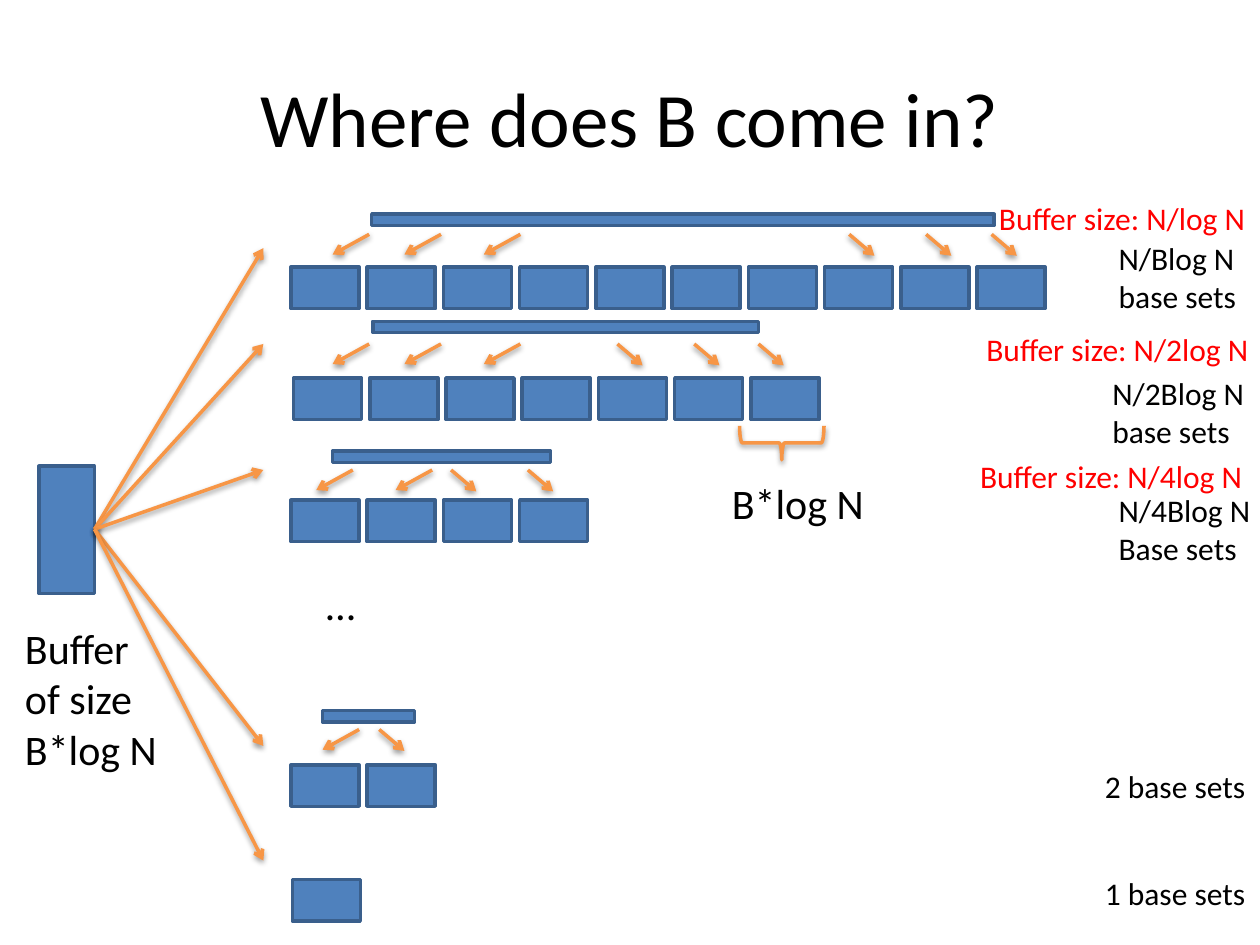
"""Build the slide that shows how buffers of each level feed their base sets."""
from dataclasses import dataclass

from lxml import etree
from pptx import Presentation
from pptx.dml.color import RGBColor
from pptx.enum.shapes import MSO_CONNECTOR, MSO_SHAPE
from pptx.enum.text import MSO_ANCHOR, MSO_AUTO_SIZE, PP_ALIGN
from pptx.oxml import parse_xml
from pptx.oxml.ns import nsdecls, qn
from pptx.util import Inches, Pt

RECTANGLE = MSO_SHAPE.RECTANGLE
LEFT_BRACE = MSO_SHAPE.LEFT_BRACE
STRAIGHT = MSO_CONNECTOR.STRAIGHT
MIDDLE = MSO_ANCHOR.MIDDLE
FIT_SHAPE = MSO_AUTO_SIZE.SHAPE_TO_FIT_TEXT
CENTER = PP_ALIGN.CENTER


@dataclass(frozen=True)
class Theme:
    font: str = "Calibri"
    text: RGBColor = RGBColor(0x00, 0x00, 0x00)
    accent: RGBColor = RGBColor(0xFF, 0x00, 0x00)
    fill: RGBColor = RGBColor(0x4F, 0x81, 0xBD)
    outline: RGBColor = RGBColor(0x3A, 0x5F, 0x8C)
    arrow: RGBColor = RGBColor(0xF7, 0x96, 0x46)
    title: int = 44
    large: int = 24
    small: int = 18
    stroke: int = 2


theme = Theme()
SHADOW = (
    f'<a:effectLst {nsdecls("a")}>'
    '<a:outerShdw blurRad="40000" dist="20000" dir="5400000" rotWithShape="0">'
    '<a:srgbClr val="000000"><a:alpha val="38000"/></a:srgbClr>'
    '</a:outerShdw></a:effectLst>'
)


def style_text(frame, size, color):
    for paragraph in frame.paragraphs:
        for span in paragraph.runs:
            span.font.name = theme.font
            span.font.size = Pt(size)
            span.font.color.rgb = color


def style_orange_line(shape):
    shape.line.color.rgb = theme.arrow
    shape.line.width = Pt(theme.stroke)
    shape._element.spPr.append(parse_xml(SHADOW))


deck = Presentation()
deck.slide_width, deck.slide_height = Inches(10), Inches(7.5)
page = deck.slides.add_slide(deck.slide_layouts[5])

title = page.shapes.title
title.left, title.top = Inches(0.5), Inches(0.3)
title.width, title.height = Inches(9), Inches(1.25)
title.text_frame.text = "Where does B come in?"
title.text_frame.vertical_anchor = MIDDLE
title.text_frame.paragraphs[0].alignment = CENTER
style_text(title.text_frame, theme.title, theme.text)

set_width, set_height, set_pitch = 0.54, 0.33, 0.605
base_set_rows = [
    (2.31, 2.12, 10),
    (2.33, 3, 7),
    (2.31, 3.97, 4),
    (2.31, 6.07, 2),
    (2.32, 6.98, 1),
]
level_buffers = [
    (2.95, 1.7, 4.94),
    (2.96, 2.55, 3.06),
    (2.64, 3.58, 1.73),
    (2.56, 5.64, 0.73),
]
rectangles = [(left, top, width, 0.09) for left, top, width in level_buffers]
rectangles.append((0.31, 3.7, 0.44, 1.01))
for left, top, count in base_set_rows:
    for index in range(count):
        rectangles.append((left + index * set_pitch, top, set_width, set_height))
for bounds in rectangles:
    box = page.shapes.add_shape(RECTANGLE, *map(Inches, bounds))
    box.shadow.inherit = False
    box.fill.solid()
    box.fill.fore_color.rgb = theme.fill
    box.line.color.rgb = theme.outline
    box.line.width = Pt(theme.stroke)

level_arrows = [
    (1.86, [2.93, 3.5, 4.13], [6.74, 7.35, 7.87]),
    (2.73, [2.93, 3.5, 4.13], [4.9, 5.51, 6.02]),
    (3.73, [2.8, 3.43], [3.58, 4.19]),
    (5.79, [2.85], [3.01]),
]
arrows = [(0.75, 4.2, 2.09, level) for level in (1.97, 2.73, 3.73, 5.92, 6.83)]
for top, left_going, right_going in level_arrows:
    arrows += [(start, top, start - 0.29, top + 0.16) for start in left_going]
    arrows += [(start, top, start + 0.2, top + 0.17) for start in right_going]
for ends in arrows:
    arrow = page.shapes.add_connector(STRAIGHT, *map(Inches, ends))
    style_orange_line(arrow)
    outline = arrow._element.spPr.find(qn("a:ln"))
    etree.SubElement(outline, qn("a:tailEnd"), type="arrow")

brace = page.shapes.add_shape(
    LEFT_BRACE, Inches(6.07), Inches(3.18), Inches(0.27), Inches(0.67)
)
brace.rotation = 270
brace.fill.background()
style_orange_line(brace)

labels = [
    (0.1, 4.89, 1.33, 1.31, "Buffer\nof size\nB*log N", theme.large, theme.text),
    (5.71, 3.74, 1.26, 0.5, "B*log N", theme.large, theme.text),
    (2.49, 4.54, 0.44, 0.5, "…", theme.large, theme.text),
    (8.78, 1.85, 1.19, 0.71, "N/Blog N\nbase sets", theme.small, theme.text),
    (8.73, 2.92, 1.26, 0.71, "N/2Blog N\nbase sets", theme.small, theme.text),
    (8.78, 3.85, 1.26, 0.71, "N/4Blog N\nBase sets", theme.small, theme.text),
    (8.67, 6.04, 1.33, 0.4, "2 base sets", theme.small, theme.text),
    (8.67, 6.89, 1.33, 0.4, "1 base sets", theme.small, theme.text),
    (7.83, 1.53, 2.18, 0.4, "Buffer size: N/log N", theme.small, theme.accent),
    (7.73, 2.57, 2.31, 0.4, "Buffer size: N/2log N", theme.small, theme.accent),
    (7.68, 3.58, 2.31, 0.4, "Buffer size: N/4log N", theme.small, theme.accent),
]
for *bounds, words, size, color in labels:
    label = page.shapes.add_textbox(*map(Inches, bounds))
    label.text_frame.text = words
    label.text_frame.word_wrap = False
    label.text_frame.auto_size = FIT_SHAPE
    style_text(label.text_frame, size, color)

deck.save("out.pptx")
